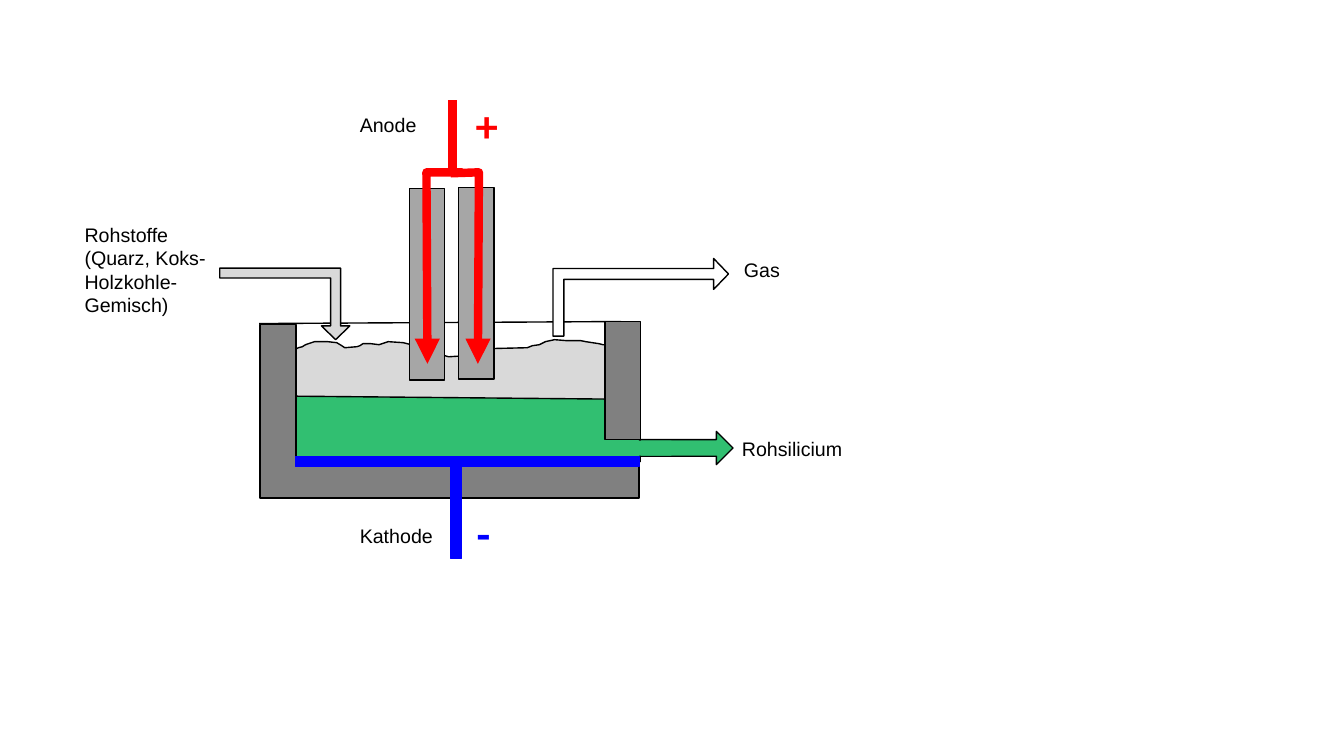
from lxml import etree
from pptx import Presentation
from pptx.dml.color import RGBColor
from pptx.enum.shapes import MSO_CONNECTOR, MSO_SHAPE as SHAPE
from pptx.enum.text import MSO_AUTO_SIZE
from pptx.oxml.ns import qn
from pptx.util import Pt

SCALE = 9144  # EMU per px, 100 px to the inch
SLIDE_SIZE = (1333, 750)
COLOURS = {
    "black": "000000", "white": "FFFFFF", "wall": "808080", "electrode": "A6A6A6",
    "charge": "D9D9D9", "silicon": "31BF71", "anode": "FF0000", "cathode": "0000FF",
}

# text, (left, top, width, height), wraps
LABELS = [
    ("Anode", (347, 107, 77, 34), False),
    ("Rohstoffe\n(Quarz, Koks-\vHolzkohle-Gemisch)", (74, 216, 163, 104), True),
    ("Gas", (728, 251, 56, 34), False),
    ("Rohsilicium", (726, 429, 120, 34), False),
    ("Kathode", (347, 515, 93, 34), False),
]
SIGNS = [("+", (462, 92, 100, 64), "anode"), ("-", (463, 497, 100, 64), "cathode")]

CHARGE_OUTLINE = [
    (282, 348), (292, 347), (296, 345), (300, 344), (303, 342), (312, 339), (325, 339),
    (334, 340), (339, 343), (342, 345), (354, 344), (357, 343), (360, 341), (368, 341),
    (376, 342), (385, 339), (400, 340), (408, 342), (421, 346), (428, 348), (438, 352),
    (445, 354), (461, 353), (478, 347), (481, 346), (523, 345), (528, 343), (535, 342),
    (541, 339), (550, 337), (562, 338), (576, 338), (581, 339), (594, 341), (598, 342),
    (612, 342), (623, 343), (625, 349), (624, 363), (623, 367), (624, 382), (623, 408),
    (616, 418), (615, 423), (606, 432), (592, 442), (579, 448), (562, 455), (546, 463),
    (531, 472), (506, 477), (485, 471), (475, 465), (461, 459), (452, 455), (431, 447),
    (415, 444), (399, 439), (381, 434), (359, 433), (342, 425), (329, 418), (315, 412),
    (297, 409), (280, 397), (268, 384), (266, 375), (268, 364), (273, 361), (282, 353),
    (289, 348),
]
SILICON_OUTLINE = [
    (605, 396), (285, 393), (283, 456), (578, 469), (611, 454), (635, 458),
    (634, 428), (601, 428),
]

RIGHT_ELECTRODE = (455, 186, 35, 190)
LEFT_ELECTRODE = (406, 187, 35, 190)
BENT_ARROW = (0.139, 0.199, 0.192)
# kind, box, fill, line, format
FURNACE = [
    (SHAPE.RECTANGLE, (600, 319, 35, 117), "wall", "black", {}),
    (SHAPE.CORNER, (258, 322, 376, 172), "wall", "black", {"adjust": (0.24, 0.206)}),
    (SHAPE.BENT_UP_ARROW, (218, 266, 129, 71), "charge", "black",
     {"adjust": BENT_ARROW, "flip": True}),
    (SHAPE.BENT_UP_ARROW, (597, 208, 77, 174), "white", "black",
     {"adjust": BENT_ARROW, "flip": True, "rotation": 270}),
    (SHAPE.RIGHT_ARROW, (635, 428, 92, 33), "silicon", "black", {}),
    (SHAPE.RECTANGLE, (568, 437, 98, 15), "silicon", None, {}),
    (SHAPE.RECTANGLE, LEFT_ELECTRODE, "electrode", "black", {}),
    (SHAPE.RECTANGLE, (293, 453, 341, 10), "cathode", "cathode", {}),
    (SHAPE.RECTANGLE, (447, 462, 11, 92), "cathode", "cathode", {}),
]

RIM = ((257, 321), (616, 319))
ANODE_FEED = ((449, 171), (449, 99))
ANODE_BRANCHES = [
    [(447, 172), (475, 171), (474, 361)],
    [(459, 171), (423, 171), (424, 361)],
]


def px(*lengths):
    return [length * SCALE for length in lengths]


def rgb(name):
    return RGBColor.from_string(COLOURS[name])


def paint(shape, fill, line, width=1):
    shape.shadow.inherit = False
    if fill:
        shape.fill.solid()
        shape.fill.fore_color.rgb = rgb(fill)
    else:
        shape.fill.background()
    if line:
        shape.line.color.rgb = rgb(line)
        shape.line.width = Pt(width)
    else:
        shape.line.fill.background()


def add_preset(slide, kind, box, fill, line, adjust=(), flip=False, rotation=0):
    shape = slide.shapes.add_shape(kind, *px(*box))
    for index, value in enumerate(adjust):
        shape.adjustments[index] = value
    shape.rotation = rotation
    if flip:
        shape.element.spPr.find(qn("a:xfrm")).set("flipV", "1")
    paint(shape, fill, line)


def add_outline(slide, points, fill, line, width=1, close=True):
    builder = slide.shapes.build_freeform(*points[0], scale=SCALE)
    builder.add_line_segments(points[1:], close=close)
    shape = builder.convert_to_shape()
    paint(shape, fill, line, width)
    return shape


def add_line(slide, ends, colour, width):
    (x1, y1), (x2, y2) = ends
    line = slide.shapes.add_connector(MSO_CONNECTOR.STRAIGHT, *px(x1, y1, x2, y2))
    line.line.color.rgb = rgb(colour)
    line.line.width = Pt(width)
    etree.SubElement(line.element.spPr, qn("a:effectLst"))


def add_text(slide, text, box, wrap=True, size=14, font="Arial", colour="black", bold=False):
    frame = slide.shapes.add_textbox(*px(*box)).text_frame
    frame.text = text
    frame.word_wrap = wrap
    frame.auto_size = MSO_AUTO_SIZE.SHAPE_TO_FIT_TEXT
    for paragraph in frame.paragraphs:
        for run in paragraph.runs:
            run.font.name, run.font.size, run.font.bold = font, Pt(size), bold
            run.font.color.rgb = rgb(colour)


def main():
    presentation = Presentation()
    presentation.slide_width, presentation.slide_height = px(*SLIDE_SIZE)
    slide = presentation.slides.add_slide(presentation.slide_layouts[6])

    add_line(slide, RIM, "black", 1)
    add_outline(slide, CHARGE_OUTLINE, "charge", "black")
    add_preset(slide, SHAPE.RECTANGLE, RIGHT_ELECTRODE, "electrode", "black")
    add_outline(slide, SILICON_OUTLINE, "silicon", "black")
    for text, box, wrap in LABELS:
        add_text(slide, text, box, wrap=wrap)
    for kind, box, fill, line, extra in FURNACE:
        add_preset(slide, kind, box, fill, line, **extra)
    for points in ANODE_BRANCHES:
        branch = add_outline(slide, points, None, "anode", width=6, close=False)
        outline = branch.element.spPr.find(qn("a:ln"))
        etree.SubElement(outline, qn("a:tailEnd"), type="triangle")
    add_line(slide, ANODE_FEED, "anode", 6)
    for sign, box, colour in SIGNS:
        add_text(slide, sign, box, size=32, font="Calibri", colour=colour, bold=True)

    presentation.save("out.pptx")


if __name__ == "__main__":
    main()
